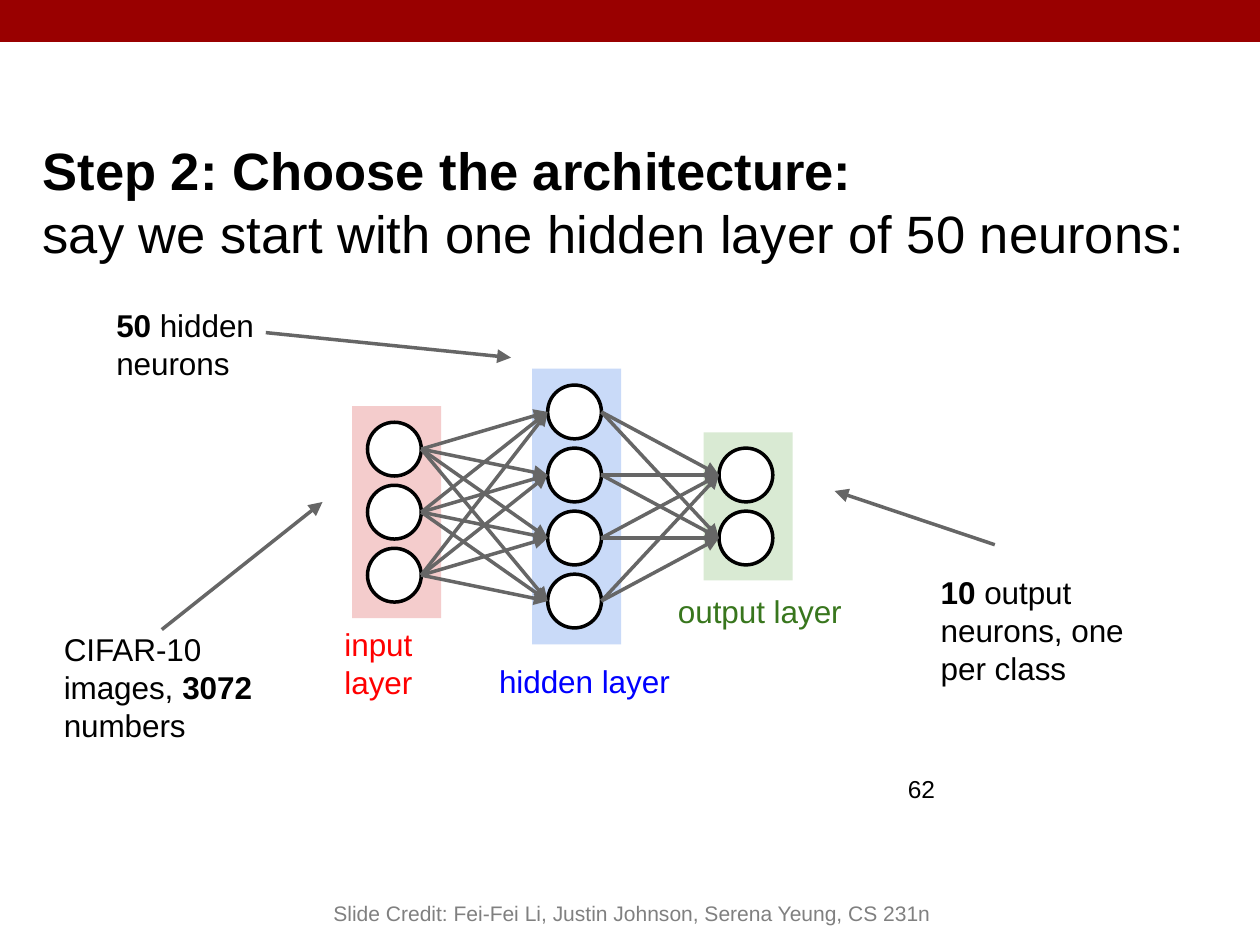
from itertools import product
from pptx import Presentation
from pptx.dml.color import RGBColor
from pptx.enum.shapes import MSO_CONNECTOR, MSO_SHAPE
from pptx.enum.text import MSO_ANCHOR, PP_ALIGN
from pptx.oxml.ns import qn
from pptx.util import Inches, Pt
from lxml.etree import SubElement

LEFT, CENTER = PP_ALIGN.LEFT, PP_ALIGN.CENTER
TOP, MIDDLE, BOTTOM = MSO_ANCHOR.TOP, MSO_ANCHOR.MIDDLE, MSO_ANCHOR.BOTTOM
BLACK, GREY = "000000", "666666"

LAYERS = [
    {"neurons": 3, "center": (31.3, 54.2), "fill": "F4CCCC"},
    {"neurons": 4, "center": (45.6, 53.6), "fill": "C9DAF8"},
    {"neurons": 2, "center": (59.2, 53.6), "fill": "D9EAD3"},
]
DIAMETER, PITCH = 4.27, 6.67
PANEL_WIDTH, PANEL_STEP, PANEL_MARGIN, PANEL_SHIFT = 7.07, 6.76, 2.14, 0.17

TEXTS = [
    ((2.45, 13.4, 96.4, 6.4), 22.5, BLACK, LEFT, TOP,
     [[("Step 2: Choose the architecture:", True)],
      [("say we start with one hidden layer of 50 neurons:", False)]]),
    ((71.13, 80.6, 6, 5.69), 10.5, BLACK, LEFT, MIDDLE, [[("62", False)]]),
    ((26.4, 64.9, 12.27, 3.91), 13.5, "FF0000", LEFT, TOP, [[("input layer", False)]]),
    ((38.67, 68.86, 15.73, 3.91), 13.5, "0000FF", LEFT, TOP, [[("hidden layer", False)]]),
    ((52.87, 61.45, 15.73, 3.91), 13.5, "38761D", LEFT, TOP, [[("output layer", False)]]),
    ((4.13, 65.48, 17.47, 5.69), 13.5, BLACK, LEFT, TOP,
     [[("CIFAR-10 images, ", False), ("3072 ", True), ("numbers", False)]]),
    ((73.73, 59.43, 17.47, 5.69), 13.5, BLACK, LEFT, TOP,
     [[("10 ", True), ("output neurons, one per class", False)]]),
    ((8.3, 31.14, 17.47, 5.69), 13.5, BLACK, LEFT, TOP,
     [[("50", True), (" hidden neurons", False)]]),
    ((10.67, 89.9, 78.93, 8.9), 9, "808080", CENTER, BOTTOM,
     [[("Slide Credit: Fei-Fei Li, Justin Johnson, Serena Yeung, CS 231n", False)]]),
]
POINTERS = [
    ((12.84, 66.63), (25.6, 53.13)),
    ((78.96, 57.65), (66.24, 51.96)),
    ((21.1, 35.2), (40.56, 37.85)),
]

prs = Presentation()
prs.slide_width = Inches(7.5)
prs.slide_height = prs.slide_width * 3 // 4
s = prs.slides.add_slide(prs.slide_layouts[6])


def color(value):
    return RGBColor.from_string(value)


def px(share):
    return round(prs.slide_width * share / 100)


def py(share):
    return round(prs.slide_height * share / 100)


def add_shape(kind, x, y, w, h, fill, line=None):
    sp = s.shapes.add_shape(kind, x, y, w, h)
    sp.shadow.inherit = False
    sp.fill.solid()
    sp.fill.fore_color.rgb = color(fill)
    if line:
        sp.line.color.rgb = color(line)
        sp.line.width = Pt(1.5)
    else:
        sp.line.fill.background()


def add_arrow(start, end):
    c = s.shapes.add_connector(MSO_CONNECTOR.STRAIGHT, *start, *end)
    c.line.color.rgb = color(GREY)
    c.line.width = Pt(1.5)
    SubElement(c.line._get_or_add_ln(), qn("a:tailEnd"), type="triangle")
    SubElement(c._element.spPr, qn("a:effectLst"))


def add_text(box, size, ink, align, anchor, paragraphs):
    x, y, w, h = box
    tf = s.shapes.add_textbox(px(x), py(y), px(w), py(h)).text_frame
    tf.word_wrap = True
    tf.vertical_anchor = anchor
    tf.margin_left = tf.margin_right = Inches(0.07)
    tf.margin_top = tf.margin_bottom = Inches(0.05 if anchor == BOTTOM else 0.07)
    for i, runs in enumerate(paragraphs):
        p = tf.add_paragraph() if i else tf.paragraphs[0]
        p.alignment = align
        p.font.name, p.font.size = "Arial", Pt(size)
        p.font.color.rgb = color(ink)
        for text, bold in runs:
            r = p.add_run()
            r.text, r.font.bold = text, bold


def add_layer(neurons, center, fill):
    cx, cy = center
    height = neurons * PANEL_STEP + PANEL_MARGIN
    add_shape(MSO_SHAPE.RECTANGLE, px(cx + PANEL_SHIFT - PANEL_WIDTH / 2),
              py(cy - height / 2), px(PANEL_WIDTH), py(height), fill)
    d = px(DIAMETER)
    centers = [(px(cx), py(cy + (i - (neurons - 1) / 2) * PITCH)) for i in range(neurons)]
    for x, y in centers:
        add_shape(MSO_SHAPE.OVAL, x - d // 2, y - d // 2, d, d, "FFFFFF", BLACK)
    return centers


add_shape(MSO_SHAPE.RECTANGLE, 0, 0, px(100), py(4.44), "990000")
columns = [add_layer(**layer) for layer in LAYERS]
radius = px(DIAMETER) // 2
for sources, targets in zip(columns, columns[1:]):
    for (x2, y2), (x1, y1) in product(targets, sources):
        add_arrow((x1 + radius, y1), (x2 - radius, y2))
for (x1, y1), (x2, y2) in POINTERS:
    add_arrow((px(x1), py(y1)), (px(x2), py(y2)))
for entry in TEXTS:
    add_text(*entry)

prs.save("out.pptx")
